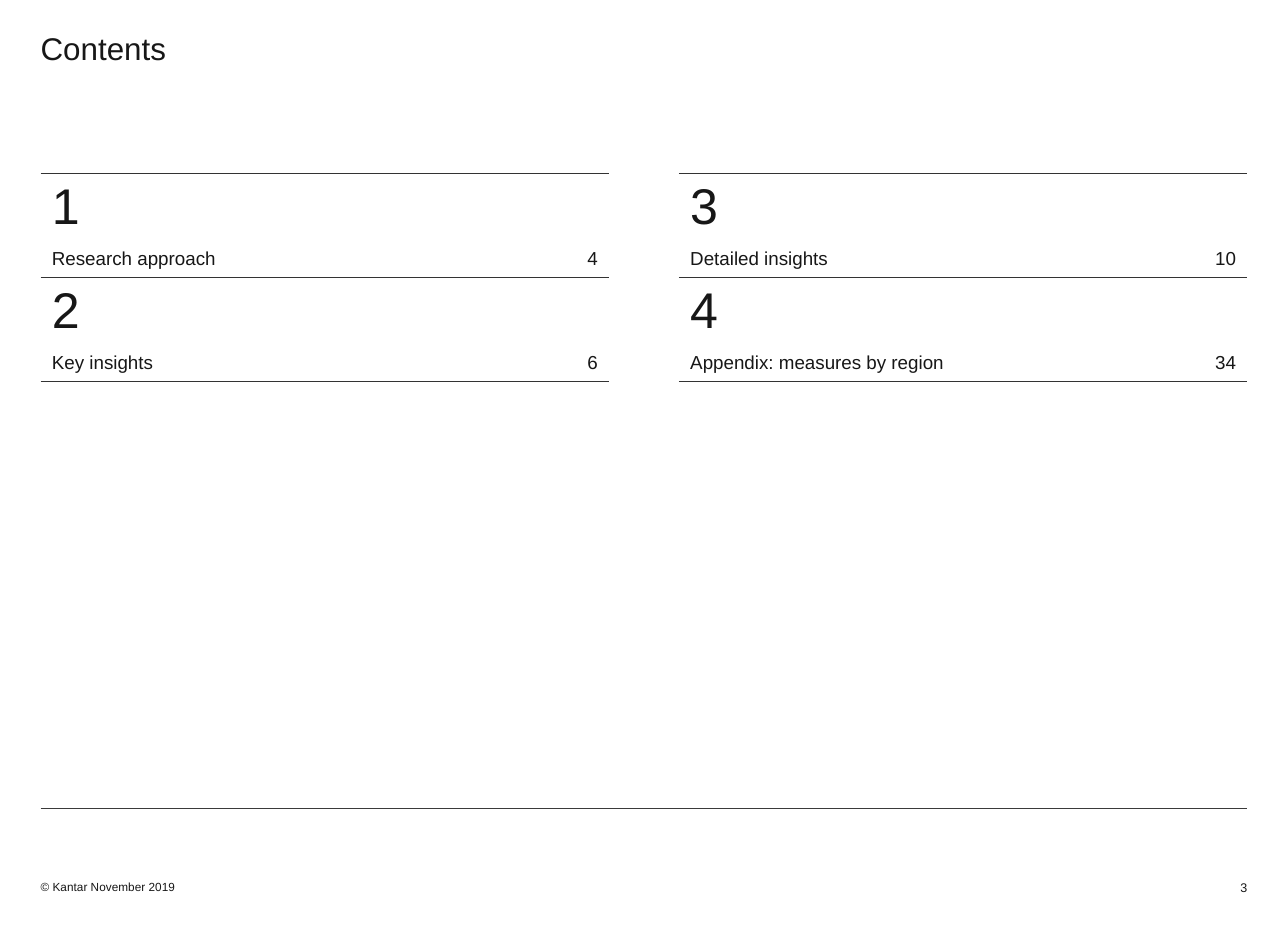
from dataclasses import dataclass

from lxml.etree import SubElement
from pptx import Presentation
from pptx.dml.color import RGBColor
from pptx.enum.shapes import MSO_CONNECTOR as Connector
from pptx.enum.text import MSO_ANCHOR as Anchor, MSO_AUTO_SIZE as AutoSize, PP_ALIGN as Align
from pptx.oxml.ns import qn
from pptx.slide import Slide
from pptx.table import _Cell as Cell
from pptx.util import Inches, Pt

COLORS = {"text": "171717", "rule": "333333", "footer_rule": "3A3A3A", "paper": "FFFFFF"}
FONT = "Arial"
LEFT, RIGHT = 0.36, 11.06
TABLE_TOP, TABLE_WIDTH, PAGE_COLUMN = 1.54, 5.04, 0.95
NUMBER_ROW, TITLE_ROW = 0.61, 0.31


@dataclass
class Section:
    number: str
    title: str
    page_number: str


@dataclass
class Label:
    text: str
    left: float
    top: float
    width: float
    height: float
    size: float
    align: Align = Align.LEFT
    anchor: Anchor = Anchor.BOTTOM
    inset_top: float = 0
    inset_bottom: float = 0


SECTIONS = [
    Section("1", "Research approach", "4"),
    Section("2", "Key insights", "6"),
    Section("3", "Detailed insights", "10"),
    Section("4", "Appendix: measures by region", "34"),
]
TITLE = Label("Contents", LEFT, 0, RIGHT - LEFT, 1.24, 20, anchor=Anchor.TOP, inset_top=0.26)
FOOTERS = [
    Label("© Kantar November 2019", LEFT, 7.65, 2.78, 0.58, 7.5, inset_bottom=0.31),
    Label("3", 10.43, 7.63, 0.63, 0.3, 8, Align.RIGHT),
]


def color(name: str) -> RGBColor:
    return RGBColor.from_string(COLORS[name])


def write(frame, text: str, size: float, align: Align = Align.LEFT) -> None:
    para = frame.paragraphs[0]
    para.text = text
    para.alignment = align
    para.font.name = FONT
    para.font.size = Pt(size)
    para.font.color.rgb = color("text")


def place_label(box, label: Label) -> None:
    box.left, box.top = Inches(label.left), Inches(label.top)
    box.width, box.height = Inches(label.width), Inches(label.height)
    frame = box.text_frame
    frame.word_wrap = True
    frame.auto_size = AutoSize.NONE
    frame.vertical_anchor = label.anchor
    frame.margin_left = frame.margin_right = 0
    frame.margin_top, frame.margin_bottom = Inches(label.inset_top), Inches(label.inset_bottom)
    write(frame, label.text, label.size, label.align)


def format_cell(cell: Cell, ruled_side: str) -> None:
    properties = cell._tc.get_or_add_tcPr()
    for side in ("lnL", "lnR", "lnT", "lnB"):
        border = SubElement(properties, qn(f"a:{side}"), w=str(Pt(1)))
        if side == ruled_side:
            fill = SubElement(border, qn("a:solidFill"))
            SubElement(fill, qn("a:srgbClr"), val=COLORS["rule"])
        else:
            SubElement(border, qn("a:noFill"))
    cell.fill.solid()
    cell.fill.fore_color.rgb = color("paper")


def add_contents(page: Slide, left: float, sections: list[Section]) -> None:
    heights = [NUMBER_ROW, TITLE_ROW] * len(sections)
    table = page.shapes.add_table(
        len(heights), 2, Inches(left), Inches(TABLE_TOP), Inches(TABLE_WIDTH), Inches(sum(heights))
    ).table
    table.first_row = table.horz_banding = False
    table.columns[0].width = Inches(TABLE_WIDTH - PAGE_COLUMN)
    table.columns[1].width = Inches(PAGE_COLUMN)
    for index, height in enumerate(heights):
        table.rows[index].height = Inches(height)
        for column in range(2):
            format_cell(table.cell(index, column), "lnB" if index % 2 else "lnT")
    for index, section in enumerate(sections):
        write(table.cell(2 * index, 0).text_frame, section.number, 32)
        write(table.cell(2 * index + 1, 0).text_frame, section.title, 12)
        write(table.cell(2 * index + 1, 1).text_frame, section.page_number, 12, Align.RIGHT)


def add_footer_rule(page: Slide) -> None:
    rule = page.shapes.add_connector(
        Connector.STRAIGHT, Inches(LEFT), Inches(7.17), Inches(RIGHT), Inches(7.17)
    )
    rule.line.color.rgb = color("footer_rule")
    rule.line.width = Pt(0.75)
    SubElement(rule._element.spPr, qn("a:effectLst"))


def main() -> None:
    """Build the contents page and save it."""
    deck = Presentation()
    deck.slide_width, deck.slide_height = Inches(11.42), Inches(8.27)
    page = deck.slides.add_slide(deck.slide_layouts[5])
    place_label(page.shapes.title, TITLE)
    add_footer_rule(page)
    add_contents(page, LEFT, SECTIONS[:2])
    add_contents(page, RIGHT - TABLE_WIDTH, SECTIONS[2:])
    for label in FOOTERS:
        place_label(page.shapes.add_textbox(0, 0, 0, 0), label)
    deck.save("out.pptx")


if __name__ == "__main__":
    main()
